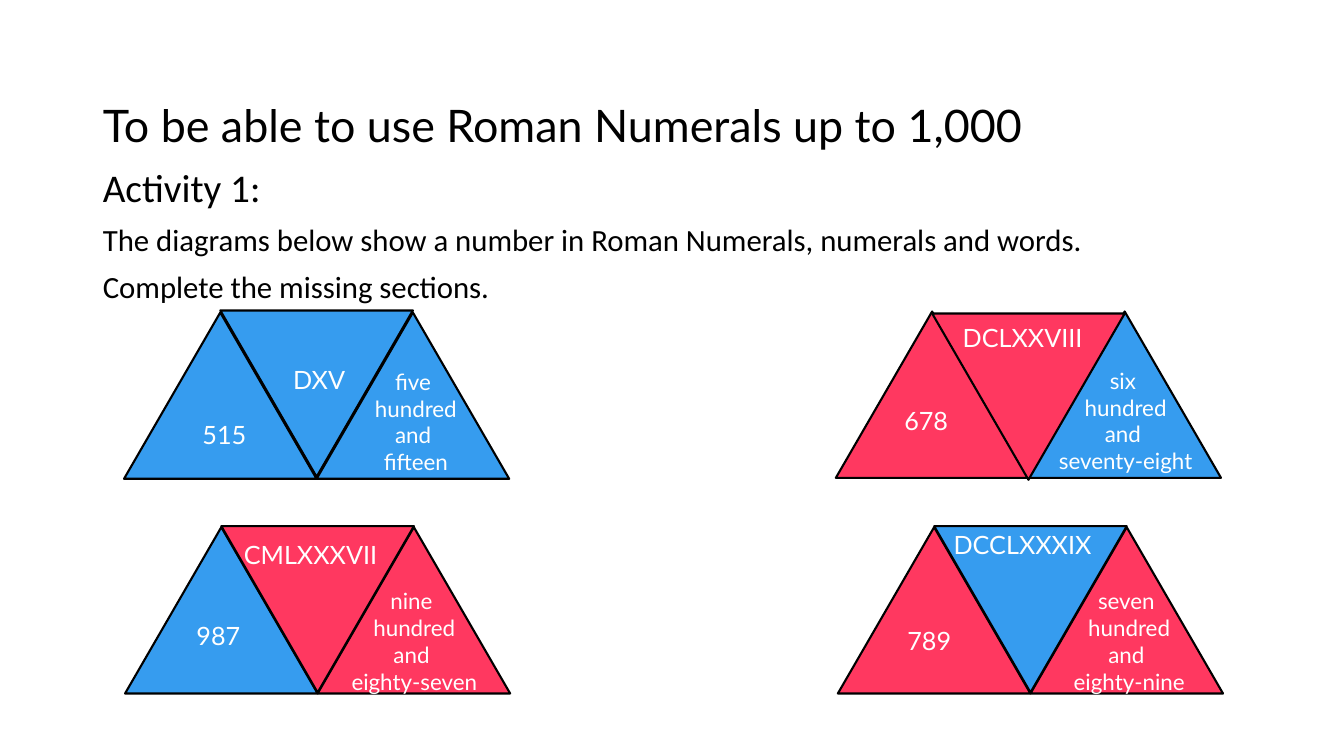
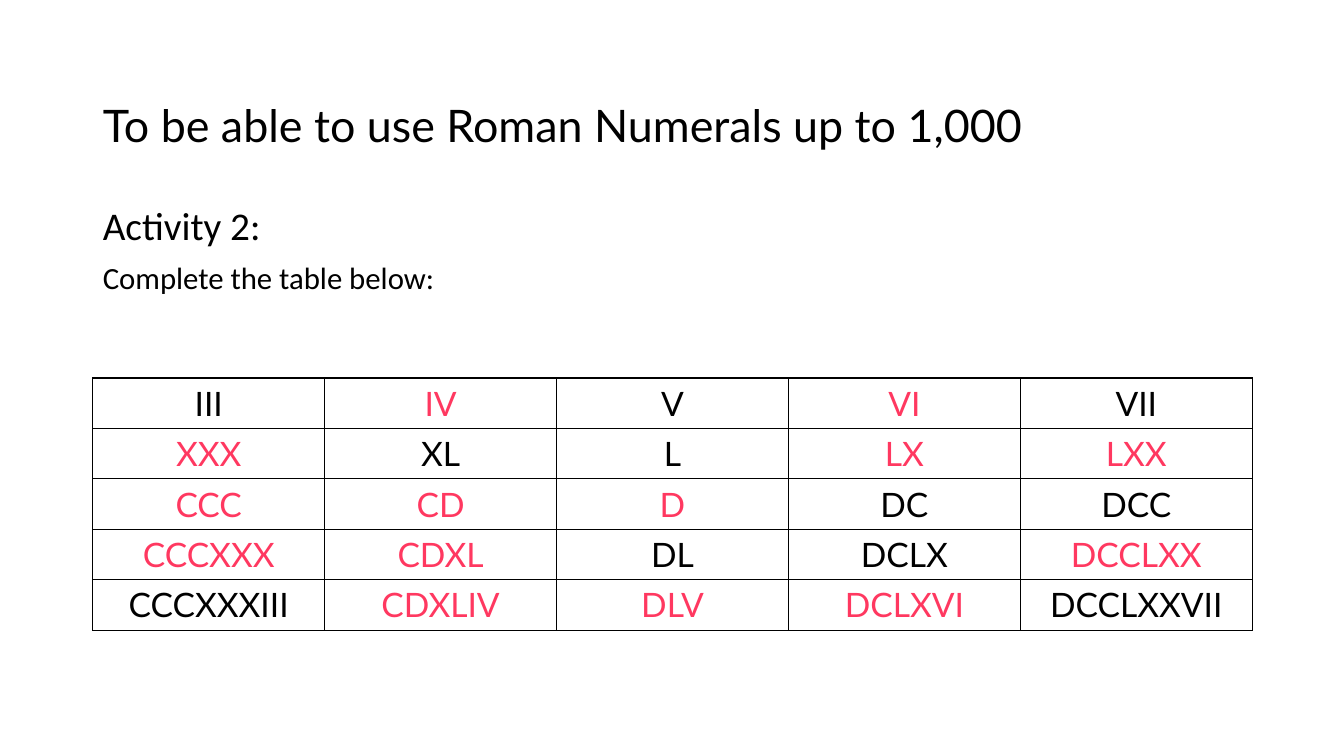
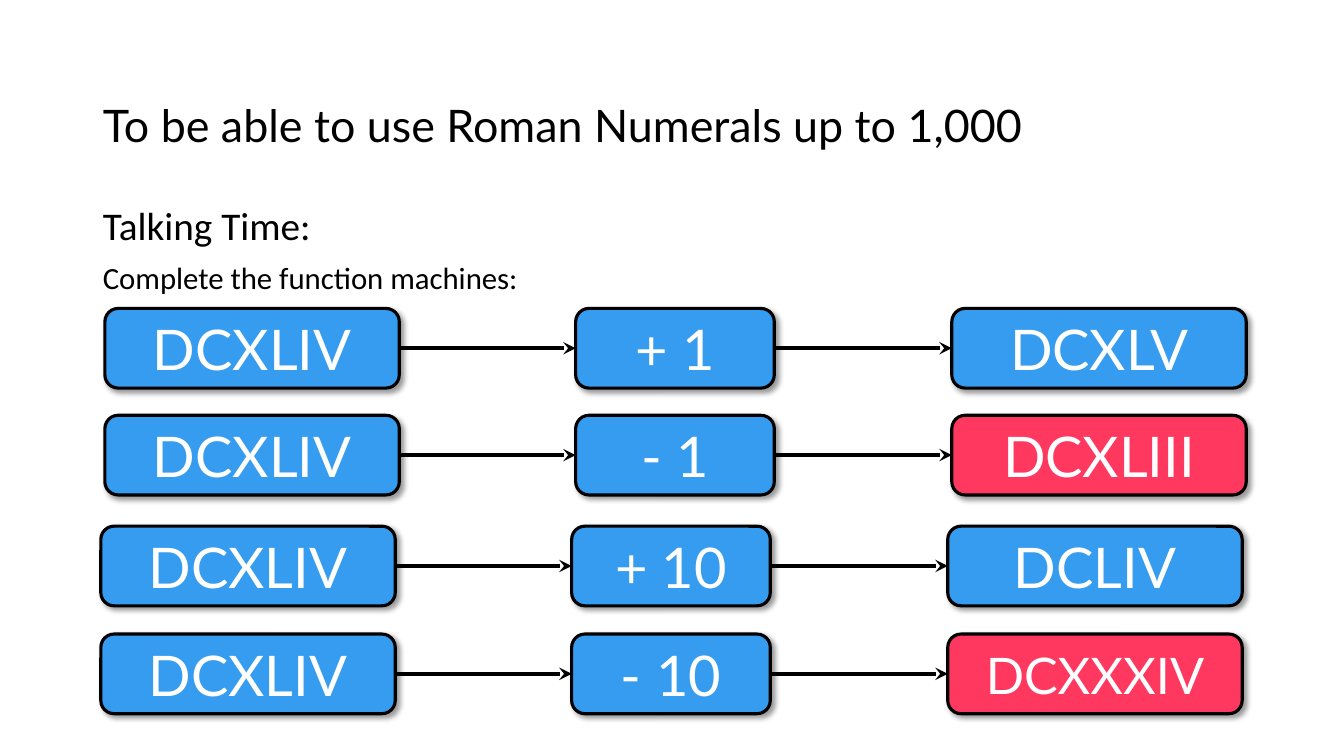
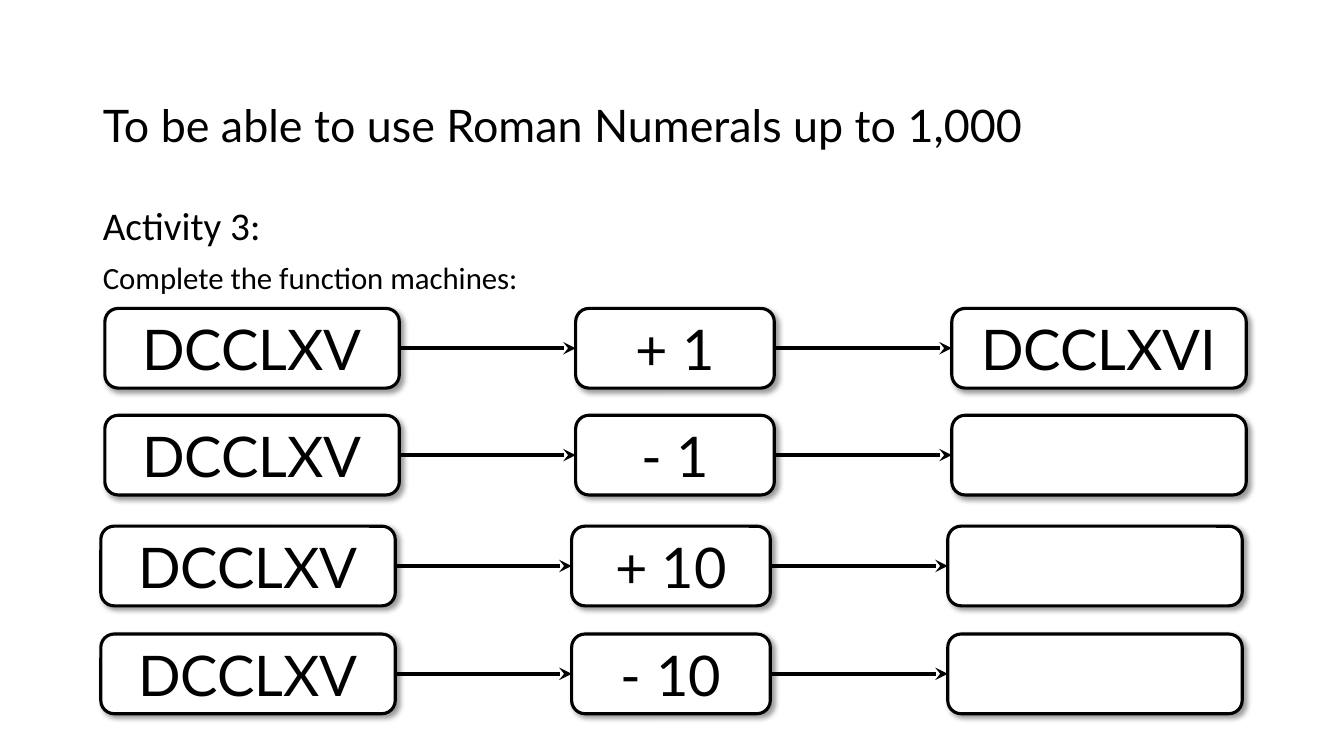
from lxml import etree
from pptx import Presentation
from pptx.dml.color import RGBColor
from pptx.enum.shapes import MSO_CONNECTOR, MSO_SHAPE
from pptx.enum.text import MSO_ANCHOR, MSO_AUTO_SIZE, PP_ALIGN
from pptx.oxml import parse_xml
from pptx.oxml.ns import nsdecls, qn
from pptx.util import Inches, Pt

LEFT, MID = PP_ALIGN.LEFT, PP_ALIGN.CENTER
TOP, CENTRE = MSO_ANCHOR.TOP, MSO_ANCHOR.MIDDLE
FIXED, GROW = MSO_AUTO_SIZE.NONE, MSO_AUTO_SIZE.SHAPE_TO_FIT_TEXT
PEAK, ROUND = MSO_SHAPE.ISOSCELES_TRIANGLE, MSO_SHAPE.ROUNDED_RECTANGLE
LINE = MSO_CONNECTOR.STRAIGHT

BLACK, WHITE, BLUE, RED = "000000", "FFFFFF", "369CEF", "FF3860"
HEAD = "To be able to use Roman Numerals up to 1,000"
SHADE = (
    f'<a:effectLst {nsdecls("a")}>'
    '<a:outerShdw blurRad="50800" dist="38100" dir="2700000" algn="tl" rotWithShape="0">'
    '<a:srgbClr val="000000"><a:alpha val="40000"/></a:srgbClr>'
    "</a:outerShdw></a:effectLst>"
)


def hue(code):
    """Turn a hex string into a colour."""
    return RGBColor.from_string(code)


class Deck:
    """Hold the lesson style and the current slide."""

    def __init__(self):
        """Start an empty wide deck."""
        self.show = Presentation()
        self.show.slide_width = Inches(13.33)
        self.show.slide_height = Inches(7.5)
        self.slide = None

    def text(self, para, words, size, color=BLACK, font="Lato"):
        """Add text to a paragraph, breaking lines at newlines."""
        for i, part in enumerate(words.split("\n")):
            if i:
                para.add_line_break()
            run = para.add_run()
            run.text = part
            run.font.size = Pt(size)
            run.font.name = font
            run.font.color.rgb = hue(color)

    def place(self, shape, box, anchor):
        """Move a placeholder and return its text frame."""
        shape.left, shape.top, shape.width, shape.height = map(Inches, box)
        frame = shape.text_frame
        frame.auto_size = FIXED
        frame.word_wrap = True
        frame.vertical_anchor = anchor
        return frame

    def page(self, lines, top=2):
        """Add a slide with the shared title and its task lines."""
        self.slide = self.show.slides.add_slide(self.show.slide_layouts[1])
        title, body = self.slide.placeholders
        para = self.place(title, (0.92, 0.54, 9.6, 1.45), CENTRE).paragraphs[0]
        para.alignment = LEFT
        para.line_spacing = 0.9
        self.text(para, HEAD, 32)
        frame = self.place(body, (0.92, top, 11.5, 6.76 - top), TOP)
        for i, words in enumerate(lines):
            para = frame.add_paragraph() if i else frame.paragraphs[0]
            props = para._p.get_or_add_pPr()
            props.set("marL", "0")
            props.set("indent", "0")
            etree.SubElement(props, qn("a:buNone"))
            para.line_spacing = 0.9
            para.space_before = Pt(10 if i else 0)
            self.text(para, words, 22 if i else 28, font="Calibri")

    def shape(self, kind, box, fill, width):
        """Add a filled shape with a black outline."""
        item = self.slide.shapes.add_shape(kind, *map(Inches, box))
        item.shadow.inherit = False
        item.fill.solid()
        item.fill.fore_color.rgb = hue(fill)
        item.line.color.rgb = hue(BLACK)
        item.line.width = Pt(width)
        return item

    def label(self, box, paras, size, align=LEFT):
        """Add a white text label that does not wrap."""
        frame = self.slide.shapes.add_textbox(*map(Inches, box)).text_frame
        frame.word_wrap = False
        frame.auto_size = GROW
        for i, words in enumerate(paras):
            para = frame.add_paragraph() if i else frame.paragraphs[0]
            para.alignment = align
            self.text(para, words, size, WHITE)

    def trio(self, x, y, drop, fills):
        """Add two upright triangles with an inverted one between."""
        side, high = 1.91, 1.65
        spots = ((x, y), (x + side, y), (x + side / 2, y + drop))
        for (left, top), fill in zip(spots, fills):
            item = self.shape(PEAK, (left, top, side, high), fill, 1.5)
        item.rotation = 180

    def box(self, box, words, fill, size):
        """Add a shaded rounded box with centred text."""
        item = self.shape(ROUND, box, fill, 2.25)
        props = item._element.spPr
        props.replace(props.find(qn("a:effectLst")), parse_xml(SHADE))
        if words:
            frame = item.text_frame
            frame.word_wrap = True
            frame.vertical_anchor = CENTRE
            para = frame.paragraphs[0]
            para.alignment = MID
            self.text(para, words, size, BLACK if fill == WHITE else WHITE)
        return item

    def arrow(self, start, end):
        """Join the facing sides of two boxes with an arrow."""
        line = self.slide.shapes.add_connector(LINE, 0, 0, 0, 0)
        line.begin_connect(start, 3)
        line.end_connect(end, 1)
        line.line.color.rgb = hue(BLACK)
        line.line.width = Pt(3)
        etree.SubElement(line.line._get_or_add_ln(), qn("a:tailEnd"), type="stealth")
        etree.SubElement(line._element.spPr, qn("a:effectLst"))

    def chain(self, x, y, texts, fills, last):
        """Add one function machine: input, step and output."""
        plan = zip((0, 4.67, 8.4), (2.92, 1.97, 2.92), texts, fills, (40, 40, last))
        row = [
            self.box((x + shift, y, wide, 0.79), words, fill, size)
            for shift, wide, words, fill, size in plan
        ]
        for start, end in zip(row, row[1:]):
            self.arrow(start, end)

    def grid(self, box, rows, given):
        """Add a ruled table with the found answers in red."""
        count = len(rows[0])
        frame = self.slide.shapes.add_table(len(rows), count, *map(Inches, box))
        table = frame.table
        table.first_row = table.horz_banding = False
        for r, row in enumerate(rows):
            for c, words in enumerate(row):
                cell = table.cell(r, c)
                self.rule(cell)
                cell.fill.solid()
                cell.fill.fore_color.rgb = hue(WHITE)
                para = cell.text_frame.paragraphs[0]
                para.alignment = MID
                self.text(para, words, 24, BLACK if words in given else RED)

    def rule(self, cell):
        """Draw thin black borders around a cell."""
        props = cell._tc.get_or_add_tcPr()
        for side in ("lnL", "lnR", "lnT", "lnB"):
            line = etree.SubElement(props, qn(f"a:{side}"), w=str(Pt(1)))
            fill = etree.SubElement(line, qn("a:solidFill"))
            etree.SubElement(fill, qn("a:srgbClr"), val=BLACK)


TRIOS = (
    (1.23, 3.1, -0.02, (BLUE, BLUE, BLUE)),
    (1.24, 5.23, -0.01, (BLUE, RED, RED)),
    (8.29, 3.09, 0.02, (RED, BLUE, RED)),
    (8.31, 5.23, -0.01, (RED, RED, BLUE)),
)
SIGNS = (
    (1.91, 4.11, 0.66, "515"),
    (2.81, 3.57, 0.79, "DXV"),
    (1.85, 6.11, 0.69, "987"),
    (2.32, 5.3, 1.67, "CMLXXXVII"),
    (8.87, 3.97, 0.69, "678"),
    (9.45, 3.15, 1.53, "DCLXXVIII"),
    (8.9, 6.15, 0.69, "789"),
    (9.36, 5.2, 1.76, "DCCLXXXIX"),
)
WORDS = (
    (3.54, 3.6, 1.17, "five", "fifteen"),
    (3.23, 5.78, 1.76, "nine", "eighty-seven"),
    (10.23, 3.59, 1.87, "six", "seventy-eight"),
    (10.43, 5.78, 1.54, "seven", "eighty-nine"),
)
ROWS = (
    ("III", "IV", "V", "VI", "VII"),
    ("XXX", "XL", "L", "LX", "LXX"),
    ("CCC", "CD", "D", "DC", "DCC"),
    ("CCCXXX", "CDXL", "DL", "DCLX", "DCCLXX"),
    ("CCCXXXIII", "CDXLIV", "DLV", "DCLXVI", "DCCLXXVII"),
)
GIVEN = {"III", "V", "VII", "XL", "L", "DC", "DCC", "DL", "DCLX", "CCCXXXIII", "DCCLXXVII"}
STEPS = ((1.04, 3.06, "+ 1"), (1.04, 4.12, "- 1"), (1, 5.22, "+ 10"), (1, 6.29, "- 10"))
TALK = (("DCXLV", BLUE, 40), ("DCXLIII", RED, 40), ("DCLIV", BLUE, 40), ("DCXXXIV", RED, 36))
TASK = (("DCCLXVI", WHITE, 40),) + (("", WHITE, 40),) * 3
SETS = (
    ("Talking Time:", "DCXLIV", BLUE, TALK),
    ("Activity 3:", "DCCLXV", WHITE, TASK),
)


def main():
    """Build the four slides and save them."""
    deck = Deck()
    deck.page(
        (
            "Activity 1:",
            "The diagrams below show a number in Roman Numerals, numerals and words.",
            "Complete the missing sections.",
        ),
        1.62,
    )
    for trio in TRIOS:
        deck.trio(*trio)
    for x, y, wide, sign in SIGNS:
        deck.label((x, y, wide, 0.4), (sign,), 18)
    for x, y, wide, first, last in WORDS:
        paras = (f"{first} \nhundred", f"and \n{last}")
        deck.label((x, y, wide, 1.18), paras, 16, MID)

    deck.page(("Activity 2:", "Complete the table below:"))
    deck.grid((0.92, 3.75, 11.5, 2.5), ROWS, GIVEN)

    for name, start, fill, ends in SETS:
        deck.page((name, "Complete the function machines:"))
        for (x, y, step), (end, tint, size) in zip(STEPS, ends):
            deck.chain(x, y, (start, step, end), (fill, fill, tint), size)
    deck.show.save("out.pptx")


if __name__ == "__main__":
    main()
